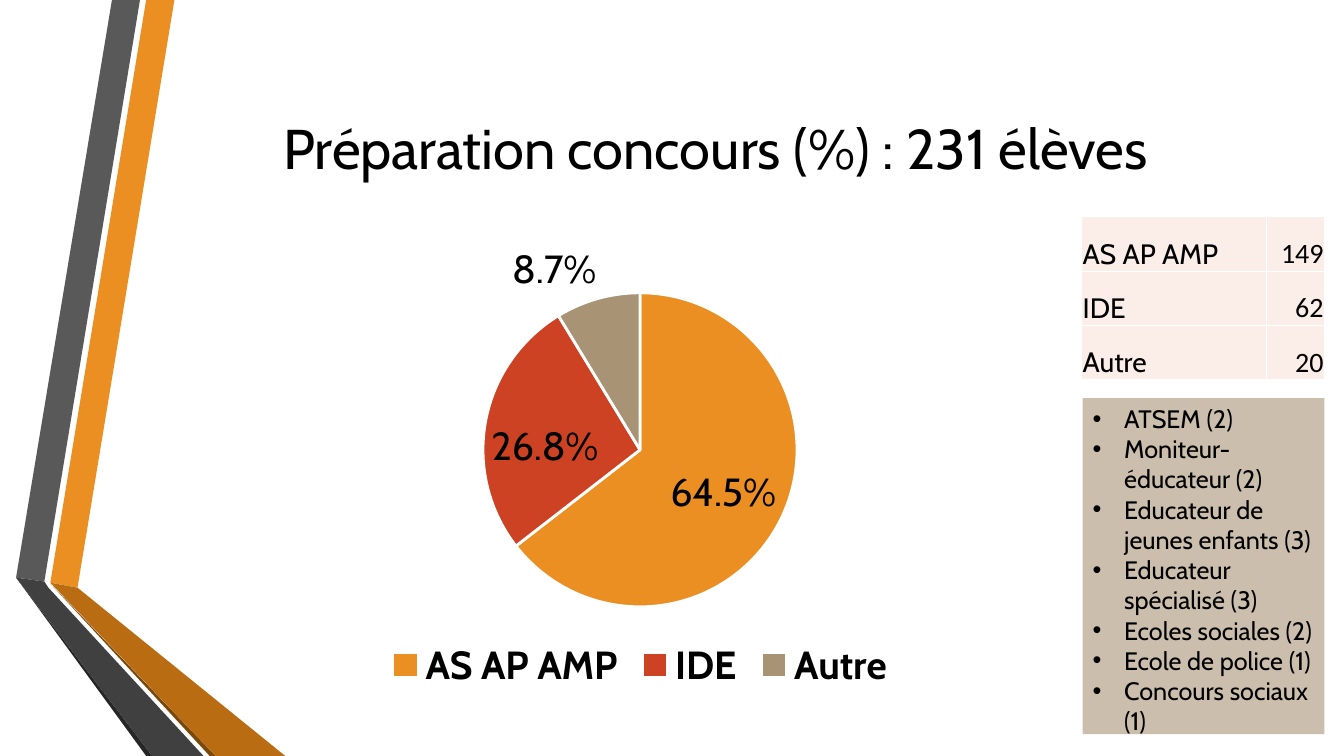
"""Build the slide on exam preparation: a pie, a table and a list."""
from typing import NamedTuple

from lxml.etree import SubElement
from pptx import Presentation
from pptx.chart.data import CategoryChartData as PieData
from pptx.dml.color import RGBColor as Rgb
from pptx.enum.chart import XL_CHART_TYPE as Kind
from pptx.enum.chart import XL_LABEL_POSITION as Spot
from pptx.enum.chart import XL_LEGEND_POSITION as Side
from pptx.enum.text import MSO_ANCHOR as Anchor
from pptx.enum.text import MSO_AUTO_SIZE as Fit
from pptx.enum.text import PP_ALIGN as Align
from pptx.oxml.ns import qn
from pptx.util import Pt

FACE = "Cabin"
HUES = {
    "black": "000000", "white": "FFFFFF", "orange": "EB8F22",
    "rust": "B96C11", "brown": "7B480B", "grey": "595959",
    "dark": "404040", "coal": "262626", "red": "CD4223",
    "tan": "A89374", "sand": "CBBEAC", "blush": "FBEEE8",
}


class Box(NamedTuple):
    """Place and size in points."""
    left: float
    top: float
    width: float
    height: float


class Band(NamedTuple):
    """One facet of the folded ribbons."""
    hue: str
    spots: list[tuple[float, float]]


class Exam(NamedTuple):
    """One exam group with its count, share, hue and label spot."""
    name: str
    count: int
    share: float
    hue: str
    spot: Spot


BANDS = [
    Band("orange", [(36, 416.2), (55.4, 419.8), (124.6, 0), (104.4, 0)]),
    Band("grey", [(100, 0), (80, 0), (11.5, 412.6), (31.7, 415.4)]),
    Band("coal", [(11.5, 412.6), (104.4, 540), (108.7, 540)]),
    Band("brown", [(36, 416.9), (149.8, 540), (154, 540)]),
    Band("rust", [(36, 416.2), (154, 540), (203.8, 540), (55.4, 419.8)]),
    Band("dark", [(145.4, 540), (34.6, 419.8), (31.7, 415.4),
                  (11.5, 412.6), (108.7, 540)]),
]
EXAMS = [
    Exam("AS AP AMP", 149, 64.5, "orange", Spot.INSIDE_END),
    Exam("IDE", 62, 26.8, "red", Spot.INSIDE_END),
    Exam("Autre", 20, 8.7, "tan", Spot.OUTSIDE_END),
]
OTHERS = [
    "ATSEM (2)", "Moniteur-éducateur (2)", "Educateur de jeunes enfants (3)",
    "Educateur spécialisé (3)", "Ecoles sociales (2)", "Ecole de police (1)",
    "Concours sociaux (1)",
]
PLOT = {"x": 0.31, "y": 0.14, "w": 0.38, "h": 0.67}


def tint(hue: str) -> Rgb:
    """Return the named colour."""
    return Rgb.from_string(HUES[hue])


def paint(item, hue: str) -> None:
    """Fill an item with a plain colour."""
    item.fill.solid()
    item.fill.fore_color.rgb = tint(hue)


def style(font, size: float, face: str = FACE, bold: bool = False) -> None:
    """Set a font in black."""
    font.name, font.size, font.bold = face, Pt(size), bold
    font.color.rgb = tint("black")


def place(shape, box: Box) -> None:
    """Move and size a shape."""
    shape.left, shape.top, shape.width, shape.height = map(Pt, box)


def draw_band(slide, band: Band) -> None:
    """Draw one ribbon facet."""
    start, *rest = [(Pt(x), Pt(y)) for x, y in band.spots]
    pen = slide.shapes.build_freeform(*start)
    pen.add_line_segments(rest)
    shape = pen.convert_to_shape()
    shape.shadow.inherit = False
    paint(shape, band.hue)
    shape.line.fill.background()


def add_title(slide, text: str) -> None:
    """Fill the title."""
    title = slide.shapes.title
    place(title, Box(116.6, 54, 789.1, 101.5))
    title.text_frame.text = text
    para = title.text_frame.paragraphs[0]
    para.alignment = Align.CENTER
    style(para.font, 40)


def add_grid(slide, box: Box) -> None:
    """Add the table of counts."""
    grid = slide.shapes.add_table(len(EXAMS), 2, *map(Pt, box)).table
    grid.first_row = grid.horz_banding = False
    for col, width in zip(grid.columns, (131.8, 41.8)):
        col.width = Pt(width)
    for row, exam in enumerate(EXAMS):
        looks = ((exam.name, FACE, Align.LEFT),
                 (str(exam.count), "Calibri", Align.RIGHT))
        for col, (text, face, align) in enumerate(looks):
            cell = grid.cell(row, col)
            cell.text = text
            cell.vertical_anchor = Anchor.BOTTOM
            cell.margin_left = cell.margin_right = cell.margin_top = Pt(0.72)
            cell.margin_bottom = Pt(0)
            paint(cell, "blush")
            para = cell.text_frame.paragraphs[0]
            para.alignment = align
            style(para.font, 20, face)


def add_pie(slide, box: Box) -> None:
    """Add the pie of shares."""
    data = PieData(number_format='0.0"%"')
    data.categories = [exam.name for exam in EXAMS]
    data.add_series("Concours", [exam.share for exam in EXAMS])
    chart = slide.shapes.add_chart(Kind.PIE, *map(Pt, box), data).chart
    chart.has_title = False
    style(chart.font, 28)
    chart.has_legend = True
    chart.legend.position = Side.BOTTOM
    chart.legend.include_in_layout = False
    style(chart.legend.font, 28, bold=True)
    plot = chart.plots[0]
    plot.vary_by_categories = True
    plot.has_data_labels = True
    plot.data_labels.show_value = True
    plot.data_labels.show_percentage = False
    for index, exam in enumerate(EXAMS):
        point = plot.series[0].points[index]
        paint(point.format, exam.hue)
        point.format.line.color.rgb = tint("white")
        point.format.line.width = Pt(2)
        style(point.data_label.font, 28)
        point.data_label.position = exam.spot
    area = chart._chartSpace.chart.plotArea
    for old in area.findall(qn("c:layout")):
        area.remove(old)
    frame = SubElement(area, qn("c:layout"))
    area.insert(0, frame)
    hand = SubElement(frame, qn("c:manualLayout"))
    SubElement(hand, qn("c:layoutTarget"), val="inner")
    for key in "xy":
        SubElement(hand, qn(f"c:{key}Mode"), val="edge")
    for key, part in PLOT.items():
        SubElement(hand, qn(f"c:{key}"), val=str(part))


def add_list(slide, box: Box) -> None:
    """Fill the list of other exams."""
    body = slide.placeholders[1]
    place(body, box)
    paint(body, "sand")
    frame = body.text_frame
    frame.text = "\n".join(OTHERS)
    frame.auto_size = Fit.SHAPE_TO_FIT_TEXT
    for para in frame.paragraphs:
        para.space_before = Pt(0)
        style(para.font, 18)
        props = para._p.get_or_add_pPr()
        props.set("marL", str(Pt(22.5)))
        props.set("indent", str(Pt(-22.5)))
        SubElement(props, qn("a:buFont"), typeface="Arial")
        SubElement(props, qn("a:buChar"), char="•")
        props.append(props.find(qn("a:defRPr")))


def main() -> None:
    """Build and save the deck."""
    deck = Presentation()
    deck.slide_width, deck.slide_height = Pt(960), Pt(540)
    slide = deck.slides.add_slide(deck.slide_layouts[1])
    for band in BANDS:
        draw_band(slide, band)
    add_title(slide, "Préparation concours (%) : 231 élèves")
    add_grid(slide, Box(772.6, 154.8, 173.6, 116.6))
    add_pie(slide, Box(162, 162, 590.4, 335.5))
    add_list(slide, Box(773.3, 284.4, 172.8, 247))
    deck.save("out.pptx")


if __name__ == "__main__":
    main()
